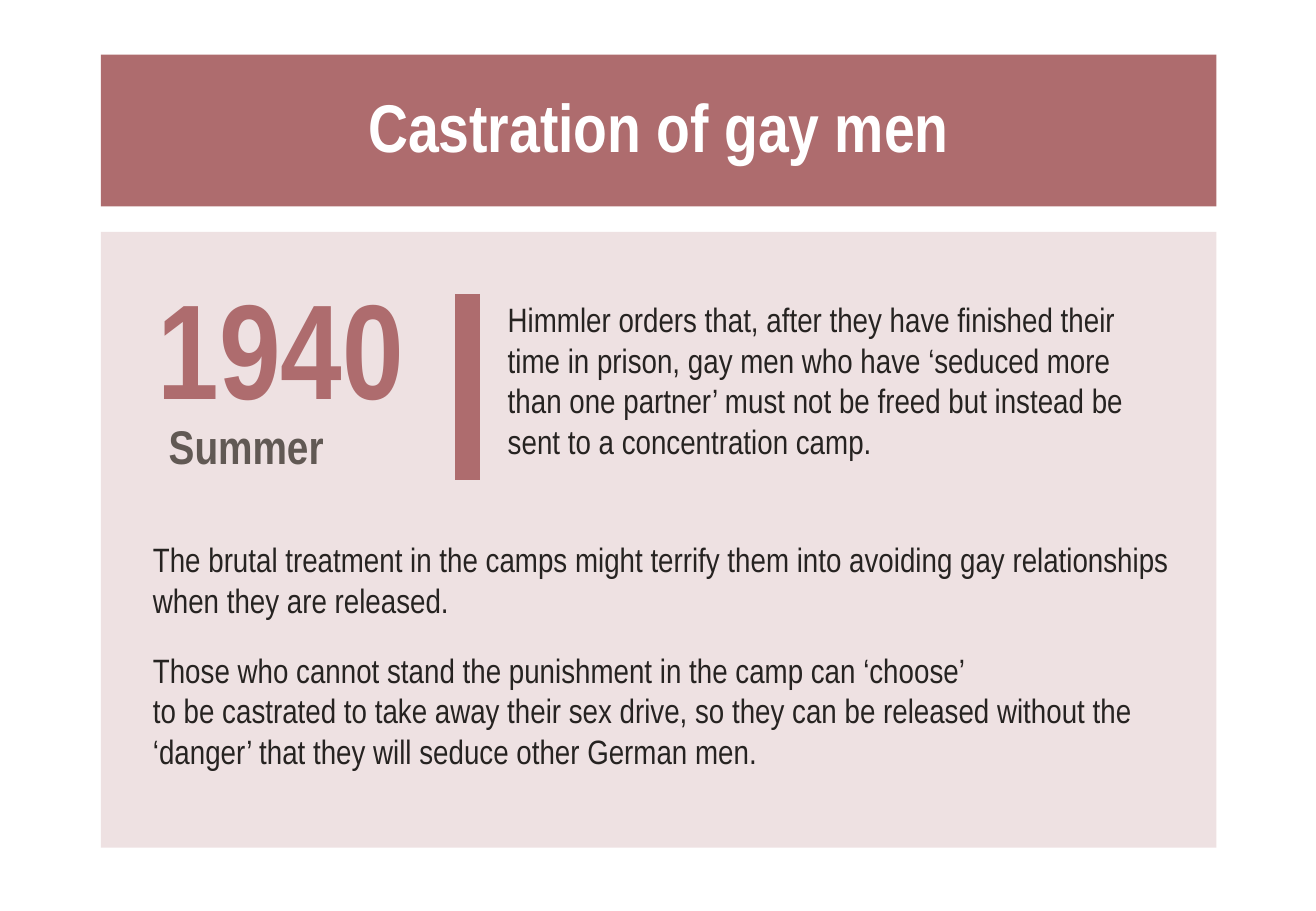
from lxml.etree import SubElement
from pptx import Presentation
from pptx.dml.color import RGBColor
from pptx.enum.shapes import MSO_CONNECTOR, MSO_SHAPE
from pptx.enum.text import MSO_ANCHOR, PP_ALIGN
from pptx.oxml.ns import qn
from pptx.util import Inches, Pt

COLOURS = {"rose": "AE6C6E", "white": "FFFFFF", "grey": "615954", "ink": "262321"}
FONT = "Arial Narrow"
LEFT, WIDTH = 0.83, 9.18  # shared by the title band and the panel


def colour(name):
    return RGBColor.from_string(COLOURS[name])


class SlideBuilder:
    def __init__(self, slide):
        self.slide = slide

    def style(self, paragraph, size, colour_name, bold=False):
        font = paragraph.font
        font.name, font.size, font.bold = FONT, Pt(size), bold
        font.color.rgb = colour(colour_name)

    def place(self, shape, left, top, width, height):
        shape.left, shape.top = Inches(left), Inches(top)
        shape.width, shape.height = Inches(width), Inches(height)

    def title(self, text, top, height):
        title = self.slide.shapes.title
        self.place(title, LEFT, top, WIDTH, height)
        title.fill.solid()
        title.fill.fore_color.rgb = colour("rose")
        title.text_frame.vertical_anchor = MSO_ANCHOR.MIDDLE
        paragraph = title.text_frame.paragraphs[0]
        paragraph.text = text
        paragraph.alignment = PP_ALIGN.CENTER
        paragraph.line_spacing = 0.9
        self.style(paragraph, 40, "white", bold=True)

    def panel(self, top, height, opacity):
        panel = self.slide.shapes.add_shape(
            MSO_SHAPE.RECTANGLE, Inches(LEFT), Inches(top), Inches(WIDTH), Inches(height))
        panel.shadow.inherit = False
        panel.line.fill.background()
        panel.fill.solid()
        panel.fill.fore_color.rgb = colour("rose")
        fill_colour = panel.fill._xPr.find(qn("a:solidFill"))[0]
        SubElement(fill_colour, qn("a:alpha")).set("val", str(opacity * 1000))

    def bar(self, x, top, bottom, width):
        bar = self.slide.shapes.add_connector(
            MSO_CONNECTOR.STRAIGHT, Inches(x), Inches(top), Inches(x), Inches(bottom))
        bar.line.color.rgb = colour("rose")
        bar.line.width = Pt(width)
        SubElement(bar._element.spPr, qn("a:effectLst"))

    def text(self, box, texts, anchor=MSO_ANCHOR.MIDDLE):
        """Add a text box and return its paragraphs."""
        frame = self.slide.shapes.add_textbox(*map(Inches, box)).text_frame
        frame.word_wrap = True
        frame.vertical_anchor = anchor
        frame.text = "\n".join(texts)
        for paragraph in frame.paragraphs:
            self.style(paragraph, 20, "ink")
        return frame.paragraphs


def main():
    presentation = Presentation()
    presentation.slide_width, presentation.slide_height = Inches(10.83), Inches(7.5)
    slide = presentation.slides.add_slide(presentation.slide_layouts[5])
    builder = SlideBuilder(slide)

    # Title band and panel
    builder.title("Castration of gay men", 0.45, 1.25)
    builder.panel(1.91, 5.07, opacity=20)

    # Date
    year, season = builder.text((1.2, 2.23, 2.48, 1.88), ["1940", "Summer"])
    builder.style(year, 80, "rose", bold=True)
    builder.style(season, 28, "grey", bold=True)
    year.line_spacing = season.line_spacing = 0.8
    year.space_after = Pt(1.7)
    season._p.get_or_add_pPr().set("marL", str(Inches(0.09)))

    # Event beside the bar
    builder.bar(3.85, 2.42, 3.95, 15)
    builder.text((4.08, 2.19, 5.51, 1.88), [
        "Himmler orders that, after they have finished their time in prison, gay men who "
        "have ‘seduced more than one partner’ must not be freed but instead be sent to a "
        "concentration camp."])

    # Consequences
    paragraphs = builder.text((1.16, 4.39, 8.58, 2.04), [
        "The brutal treatment in the camps might terrify them into avoiding gay "
        "relationships when they are released.",
        "Those who cannot stand the punishment in the camp can ‘choose’ \v"
        "to be castrated to take away their sex drive, so they can be released without "
        "the ‘danger’ that they will seduce other German men."], MSO_ANCHOR.TOP)
    paragraphs[1].space_before = Pt(17.5)

    presentation.save("out.pptx")


if __name__ == "__main__":
    main()
